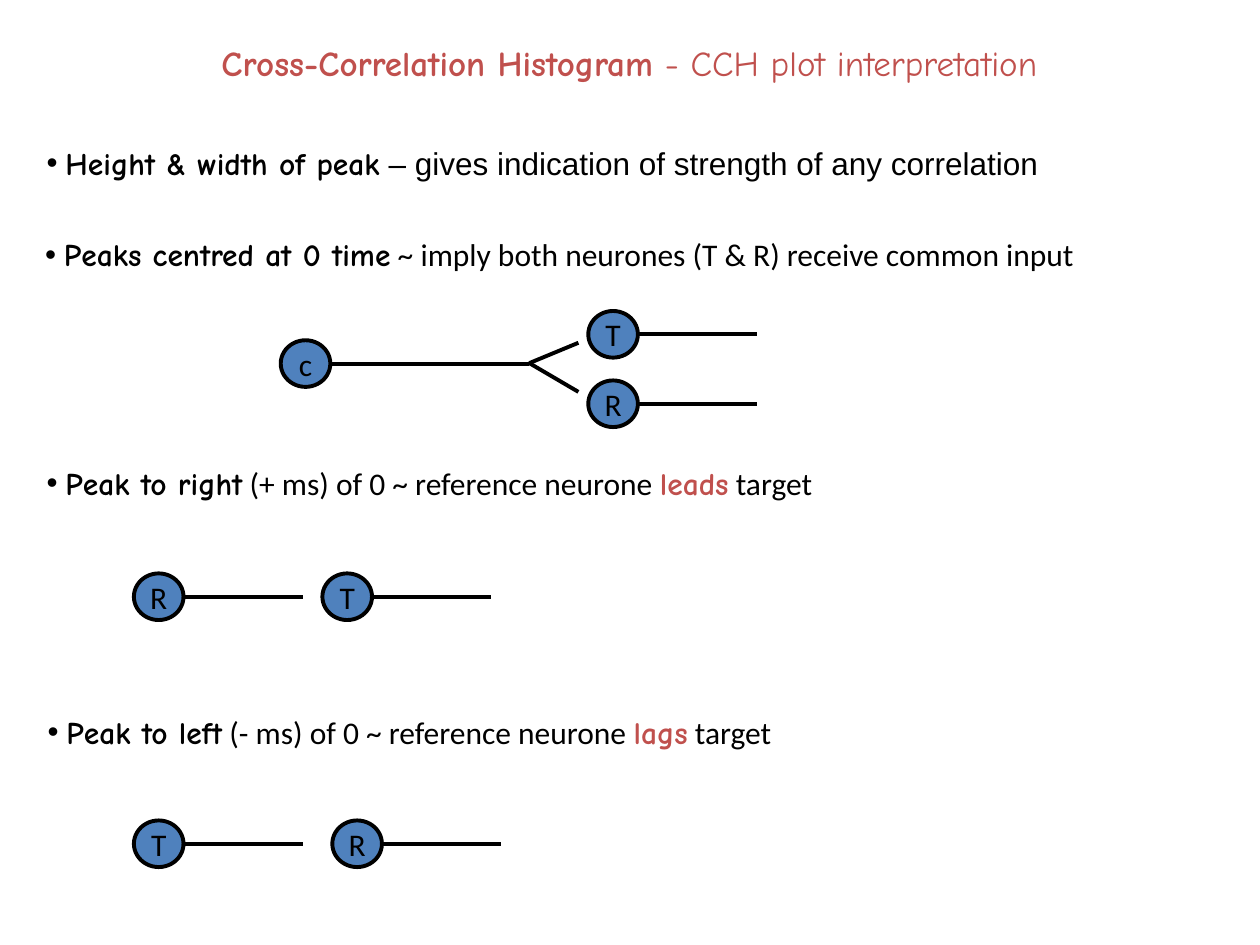
from lxml import etree
from pptx import Presentation
from pptx.dml.color import RGBColor
from pptx.enum.shapes import MSO_CONNECTOR, MSO_SHAPE
from pptx.enum.text import MSO_ANCHOR, PP_ALIGN
from pptx.oxml.ns import qn
from pptx.util import Cm, Pt

LINE = MSO_CONNECTOR.STRAIGHT
OVAL = MSO_SHAPE.OVAL
MIDDLE = MSO_ANCHOR.MIDDLE
CENTER = PP_ALIGN.CENTER

COLORS = {"ink": "000000", "red": "C0504D", "cell": "4F81BD"}
HEAD, BODY, PLAIN = "Comic Neue", "Calibri", "Arial"
CELL_W, CELL_H = 1.0, 0.94
AXON = 2.4

# Bullets: left, top, parts of (text, font, color, bold)
POINTS = [
    (0.69, 2.77, [
        ("Height & width of peak", HEAD, "ink", True),
        (" – gives indication of strength of any correlation", PLAIN, "ink", False)]),
    (0.66, 4.62, [
        ("Peaks centred at 0 time", HEAD, "ink", True),
        (" ~ imply both neurones (T & R) receive common input", BODY, "ink", False)]),
    (0.69, 9.22, [
        ("Peak to right", HEAD, "ink", True),
        (" (+ ms) of 0 ~ reference neurone ", BODY, "ink", False),
        ("leads", HEAD, "red", True),
        (" target", BODY, "ink", False)]),
    (0.71, 14.25, [
        ("Peak to left", HEAD, "ink", True),
        (" (- ms) of 0 ~ reference neurone ", BODY, "ink", False),
        ("lags", HEAD, "red", True),
        (" target", BODY, "ink", False)]),
]

# Neurones: name, left, top, axon length
CELLS = [
    ("c", 5.66, 6.86, 4.01),
    ("T", 11.86, 6.27, AXON),
    ("R", 11.86, 7.67, AXON),
    ("R", 2.7, 11.56, AXON),
    ("T", 6.5, 11.56, AXON),
    ("T", 2.7, 16.54, AXON),
    ("R", 6.7, 16.54, AXON),
]

# The common input forks towards T and R
FORK = (10.67, 7.32)
TIPS = [(11.66, 6.91), (11.66, 7.9)]


def color(name):
    return RGBColor.from_string(COLORS[name])


def add_run(para, text, font, tint, bold, size=18):
    run = para.add_run()
    run.text = text
    run.font.name = font
    run.font.size = Pt(size)
    run.font.bold = bold
    run.font.color.rgb = color(tint)


def add_title(slide):
    title = slide.shapes.title
    title.left, title.top = Cm(0.69), Cm(0.71)
    title.width, title.height = Cm(24), Cm(1.1)
    title.text_frame.vertical_anchor = MIDDLE
    para = title.text_frame.paragraphs[0]
    para.alignment = CENTER
    add_run(para, "Cross-Correlation Histogram", HEAD, "red", True, 20)
    add_run(para, " - CCH plot interpretation", HEAD, "red", False, 20)


def add_point(slide, left, top, parts):
    box = slide.shapes.add_textbox(Cm(left), Cm(top), Cm(24), Cm(1.02))
    box.text_frame.word_wrap = True
    para = box.text_frame.paragraphs[0]
    for part in parts:
        add_run(para, *part)
    # Bullet with a hanging indent
    props = para._p.get_or_add_pPr()
    props.set("marL", str(Cm(0.38)))
    props.set("indent", str(-Cm(0.38)))
    etree.SubElement(props, qn("a:buFont")).set("typeface", PLAIN)
    etree.SubElement(props, qn("a:buChar")).set("char", "•")


def add_line(slide, start, end):
    line = slide.shapes.add_connector(LINE, *map(Cm, start + end))
    line.line.color.rgb = color("ink")
    line.line.width = Pt(2.25)
    etree.SubElement(line._element.spPr, qn("a:effectLst"))


def add_cell(slide, name, left, top, axon):
    cell = slide.shapes.add_shape(
        OVAL, Cm(left), Cm(top), Cm(CELL_W), Cm(CELL_H))
    cell.shadow.inherit = False
    cell.fill.solid()
    cell.fill.fore_color.rgb = color("cell")
    cell.line.color.rgb = color("ink")
    cell.line.width = Pt(2.25)
    frame = cell.text_frame
    frame.word_wrap = False
    frame.vertical_anchor = MIDDLE
    para = frame.paragraphs[0]
    para.alignment = CENTER
    add_run(para, name, BODY, "ink", False)
    # The axon leaves from the right side
    side, mid = left + CELL_W, top + CELL_H / 2
    add_line(slide, (side, mid), (side + axon, mid))


def main():
    deck = Presentation()
    deck.slide_width, deck.slide_height = Cm(25.4), Cm(19.05)
    slide = deck.slides.add_slide(deck.slide_layouts[5])
    add_title(slide)
    for point in POINTS:
        add_point(slide, *point)
    for cell in CELLS:
        add_cell(slide, *cell)
    for tip in TIPS:
        add_line(slide, FORK, tip)
    deck.save("out.pptx")


if __name__ == "__main__":
    main()
